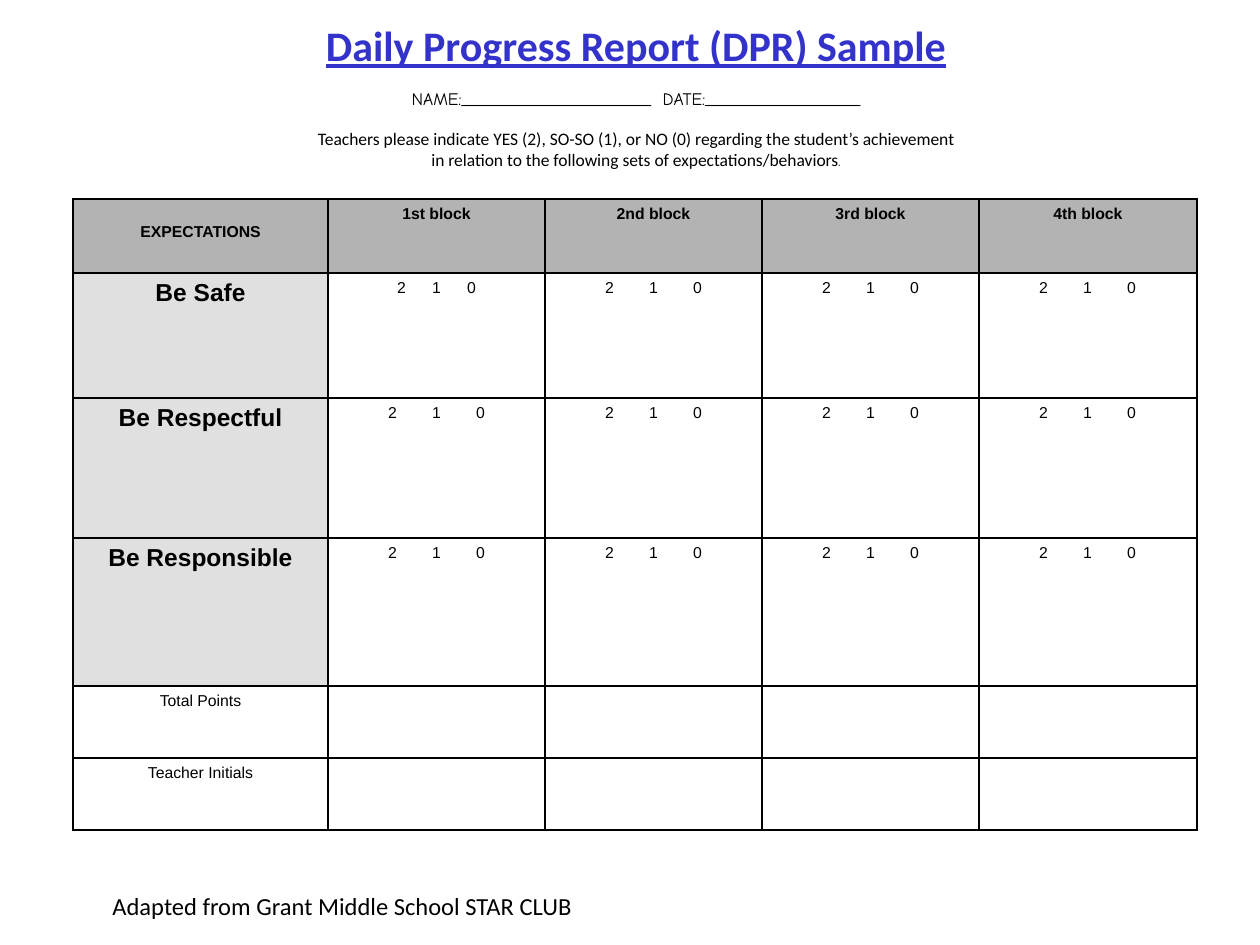
import pptx
import pptx.dml.color
import pptx.enum.text
import pptx.oxml.ns
import pptx.util
from lxml import etree

Pt = pptx.util.Pt
CENTER = pptx.enum.text.PP_ALIGN.CENTER
MIDDLE = pptx.enum.text.MSO_ANCHOR.MIDDLE
qn = pptx.oxml.ns.qn


def px(n):
    return pptx.util.Emu(round(n * 914400 / 126))


def style(run, size, face, color="000000", bold=False):
    font = run.font
    font.size, font.name, font.bold = Pt(size), face, bold
    font.color.rgb = pptx.dml.color.RGBColor.from_string(color)


deck = pptx.Presentation()
deck.slide_width, deck.slide_height = px(1260), px(945)
slide = deck.slides.add_slide(deck.slide_layouts[6])

# Heading: title, name and date line, instructions
head = slide.shapes.add_textbox(px(299), px(11), px(674), px(168)).text_frame
head.word_wrap = False
head.vertical_anchor = MIDDLE
lines = [
    (0, [("Daily Progress Report (DPR) Sample", 24, "Calibri", "3333CC")]),
    (10, [("NAME:______________________", 10, "Comic Neue", "000000"),
          (" ", 10, "Comic Neue", "000000"),
          ("DATE:__________________", 10, "Comic Neue", "000000")]),
    (11, [("Teachers please indicate YES (2), SO-SO (1), or NO (0) regarding "
           "the student’s achievement\vin relation to the following sets of "
           "expectations/behaviors", 10, "Calibri", "000000"),
          (".", 9, "Comic Neue", "000000")]),
]
for i, (gap, parts) in enumerate(lines):
    para = head.paragraphs[0] if i == 0 else head.add_paragraph()
    para.alignment = CENTER
    if gap:
        para.space_before = Pt(gap)
    para.text = parts[0][0]
    for run in para.runs:
        style(run, *parts[0][1:], bold=i == 0)
        run.font.underline = i == 0
    for text, *look in parts[1:]:
        run = para.add_run()
        run.text = text
        style(run, *look)
        if text == " ":
            run.font._element.set("spc", "340")

# Score table
widths = [255, 217, 217, 217, 218]
heights = [74, 125, 140, 148, 72, 72]
score = "\t2\t1\t0"
rows = [["EXPECTATIONS", "1st block", "2nd block", "3rd block", "4th block"]]
for goal in ["Be Safe", "Be Respectful", "Be Responsible"]:
    rows.append([goal] + [score] * 4)
for label in ["Total Points", "Teacher Initials"]:
    rows.append([label] + [""] * 4)

table = slide.shapes.add_table(
    len(rows), len(widths), px(73), px(199), px(sum(widths)), px(sum(heights))
).table
table.first_row = table.horz_banding = False
for col, width in zip(table.columns, widths):
    col.width = px(width)
for row, height in zip(table.rows, heights):
    row.height = px(height)

for r, row in enumerate(rows):
    for c, text in enumerate(row):
        cell = table.cell(r, c)
        props = cell._tc.get_or_add_tcPr()
        for side in ["lnL", "lnR", "lnT", "lnB"]:
            line = etree.SubElement(props, qn("a:" + side), w=str(Pt(1)))
            fill = etree.SubElement(line, qn("a:solidFill"))
            etree.SubElement(fill, qn("a:srgbClr"), val="000000")
        goal = c == 0 and 1 <= r <= 3
        if r == 0 or goal:
            cell.fill.solid()
            cell.fill.fore_color.rgb = pptx.dml.color.RGBColor.from_string(
                "E0E0E0" if goal else "B3B3B3")
        else:
            cell.fill.background()
        if r == c == 0:
            cell.margin_top = px(24)
        para = cell.text_frame.paragraphs[0]
        if text == score:
            step = 35 if r == c == 1 else 44
            tabs = etree.SubElement(para._p.get_or_add_pPr(), qn("a:tabLst"))
            for k in [-1, 0, 1]:
                etree.SubElement(tabs, qn("a:tab"), algn="ctr",
                                 pos=str(px(96 + k * step)))
        else:
            para.alignment = CENTER
        para.text = text
        for run in para.runs:
            style(run, 14 if goal else 9, "Arial", bold=r == 0 or goal)

# Credit line
foot = slide.shapes.add_textbox(px(100), px(885), px(500), px(42)).text_frame
foot.word_wrap = True
foot.vertical_anchor = MIDDLE
foot.text = "Adapted from Grant Middle School STAR CLUB"
style(foot.paragraphs[0].runs[0], 14, "Calibri")

deck.save("out.pptx")
